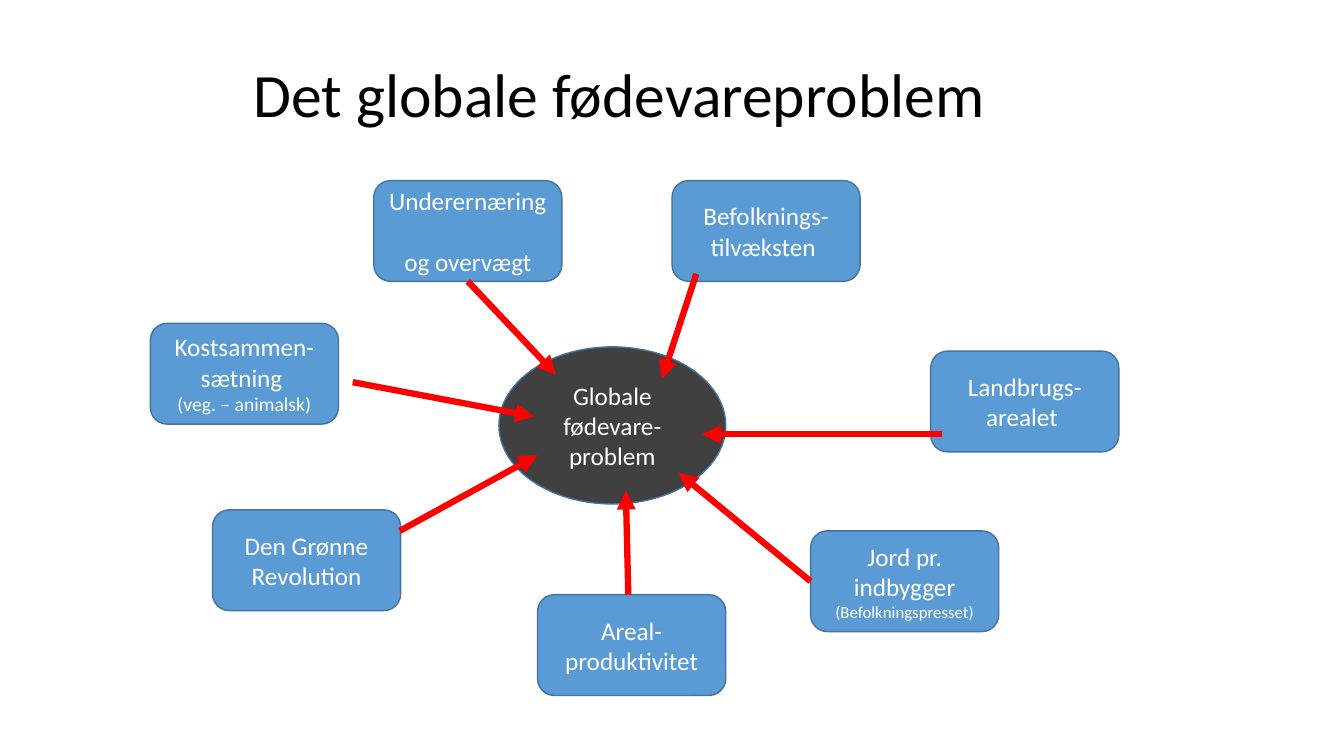
from collections import namedtuple

from lxml import etree
from pptx import Presentation
from pptx import util as u
from pptx.dml.color import RGBColor
from pptx.enum import shapes, text
from pptx.oxml import ns

WIDTH, HEIGHT = u.Inches(13.33), u.Inches(7.5)
COLUMNS, ROWS = 160, 90
TOPIC_SIZE = (22.4, 12)
FONT = "Calibri"

Box = namedtuple("Box", "left top width height")

TITLE_BOX = Box(29, 2.9, 138, 17.4)
HUB_BOX = Box(59.4, 41.3, 27, 18.7)

# label, note, note size, topic corner, arrow start in topic, arrow tip in hub
TOPICS = [
    ("Befolknings-tilvæksten ", "", 18, (80, 21.5), (2.9, 11.1), (19.4, 3.8)),
    ("Landbrugs-arealet ", "", 18, (110.8, 41.8), (1.3, 9.9), (24.2, 10.4)),
    ("Jord pr. indbygger", "(Befolkningspresset)", 12, (96.5, 63.2), (0, 6), (21.4, 15)),
    ("Kostsammen-sætning ", "(veg. – animalsk)", 14, (17.9, 38.5), (24.1, 7), (4.2, 8.3)),
    ("Den Grønne\vRevolution", "", 18, (25.3, 60.7), (22.3, 2.5), (4.6, 12.9)),
    ("Areal-produktivitet", "", 18, (64, 70.8), (10.8, 0), (15.1, 17.1)),
    ("Underernæring \vog overvægt", "", 18, (44.5, 21.5), (11.2, 12), (6.8, 3.3)),
]


def color(value):
    return RGBColor.from_string(value)


def x(columns):
    return round(WIDTH * columns / COLUMNS)


def y(rows):
    return round(HEIGHT * rows / ROWS)


def place(box):
    return x(box.left), y(box.top), x(box.width), y(box.height)


def write(frame, label, size, ink, align):
    frame.word_wrap = True
    frame.vertical_anchor = text.MSO_ANCHOR.MIDDLE
    paragraph = frame.paragraphs[0]
    paragraph.text = label
    paragraph.alignment = align
    paragraph.font.name = FONT
    paragraph.font.size = u.Pt(size)
    paragraph.font.color.rgb = color(ink)
    return paragraph


def add_title(slide, box):
    title = slide.shapes.add_textbox(*place(box))
    heading = write(title.text_frame, "Det globale fødevareproblem", 44,
                    "000000", text.PP_ALIGN.LEFT)
    heading.line_spacing = 0.9


def add_bubble(slide, box, outline, fill, label):
    bubble = slide.shapes.add_shape(outline, *place(box))
    bubble.shadow.inherit = False
    bubble.fill.solid()
    bubble.fill.fore_color.rgb = color(fill)
    bubble.line.color.rgb = color("43739E")
    bubble.line.width = u.Pt(1)
    return write(bubble.text_frame, label, 18, "FFFFFF", text.PP_ALIGN.CENTER)


def add_arrow(slide, topic, start, hub, tip):
    arrow = slide.shapes.add_connector(
        shapes.MSO_CONNECTOR.STRAIGHT,
        x(topic.left + start[0]), y(topic.top + start[1]),
        x(hub.left + tip[0]), y(hub.top + tip[1]))
    arrow.line.color.rgb = color("FF0000")
    arrow.line.width = u.Pt(4.5)
    etree.SubElement(arrow.line._get_or_add_ln(), ns.qn("a:tailEnd"), type="triangle")
    etree.SubElement(arrow._element.spPr, ns.qn("a:effectLst"))


def add_topic(slide, box, label, note, note_size):
    caption = add_bubble(slide, box, shapes.MSO_SHAPE.ROUNDED_RECTANGLE, "5B9BD5", label)
    if note:
        caption.add_line_break()
        remark = caption.add_run()
        remark.text = note
        remark.font.size = u.Pt(note_size)


def add_mind_map(slide, hub):
    add_bubble(slide, hub, shapes.MSO_SHAPE.OVAL, "404040", "Globale fødevare-problem")
    for label, note, note_size, corner, start, tip in TOPICS:
        topic = Box(*corner, *TOPIC_SIZE)
        add_topic(slide, topic, label, note, note_size)
        add_arrow(slide, topic, start, hub, tip)


def main():
    deck = Presentation()
    deck.slide_width, deck.slide_height = WIDTH, HEIGHT
    slide = deck.slides.add_slide(deck.slide_layouts[6])
    add_title(slide, TITLE_BOX)
    add_mind_map(slide, HUB_BOX)
    deck.save("out.pptx")


if __name__ == "__main__":
    main()
